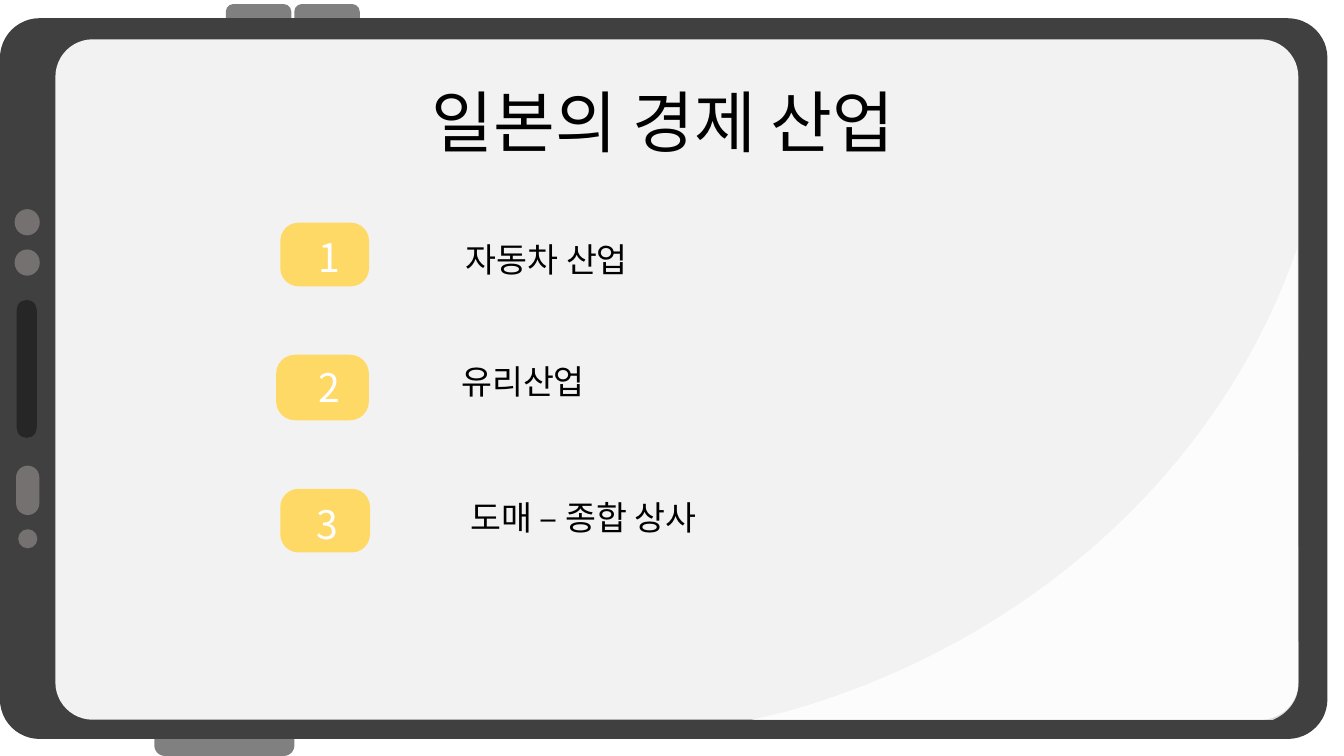
"""Build a phone-framed slide listing three Japanese industries."""
from lxml.etree import SubElement
from pptx import Presentation
from pptx.dml.color import RGBColor
from pptx.enum.shapes import MSO_SHAPE
from pptx.enum.text import MSO_ANCHOR, MSO_AUTO_SIZE, PP_ALIGN
from pptx.oxml.ns import qn
from pptx.util import Pt

FONT = "Noto Sans CJK KR"
BLACK = RGBColor(0x00, 0x00, 0x00)
WHITE = RGBColor(0xFF, 0xFF, 0xFF)
BUTTON_GREY = RGBColor(0x80, 0x80, 0x80)
FRAME_GREY = RGBColor(0x40, 0x40, 0x40)
SCREEN_GREY = RGBColor(0xF2, 0xF2, 0xF2)
SPEAKER_GREY = RGBColor(0x26, 0x26, 0x26)
SENSOR_GREY = RGBColor(0x76, 0x71, 0x71)
BADGE_YELLOW = RGBColor(0xFF, 0xD9, 0x66)

TITLE = ("일본의 경제 산업", (190.1, 54, 567.4, 65.5))
ROUND, OVAL = MSO_SHAPE.ROUNDED_RECTANGLE, MSO_SHAPE.OVAL
PHONE_PARTS = [
    (ROUND, (161.3, 2.9, 46.8, 32.4), 0.167, BUTTON_GREY),
    (ROUND, (210.2, 2.9, 46.8, 32.4), 0.167, BUTTON_GREY),
    (ROUND, (110.2, 494.6, 100.1, 45.4), 0.167, BUTTON_GREY),
    (ROUND, (0, 13, 948.2, 514.8), 0.055, FRAME_GREY),
    (ROUND, (39.6, 28.1, 887.8, 486), 0.055, SCREEN_GREY),
    (ROUND, (11.9, 214.2, 14.4, 98.6), 0.5, SPEAKER_GREY),
    (OVAL, (10.4, 178.2, 18, 18.7), None, SENSOR_GREY),
    (OVAL, (10.4, 149.4, 18, 18.7), None, SENSOR_GREY),
    (OVAL, (13, 378, 13.7, 13.7), None, SENSOR_GREY),
    (ROUND, (11.5, 332.6, 16.6, 35.3), 0.5, SENSOR_GREY),
]
GLARE_CORNER = [(927.4, 488.9), (927.4, 499.7), (920.2, 509), (910.8, 513.4)]
GLARE_EDGE = [(561.6, 508.3), (735.1, 459.4), (872.6, 334.8), (926.6, 177.1)]
GLARE_OPACITY = 80
INDUSTRIES = [
    ("1", "자동차 산업", (200.2, 159.1, 63.4, 45.4),
     (184.3, 163.4, 101.5, 41), (244.1, 167, 293, 36)),
    ("2", "유리산업", (197.3, 253.4, 66.2, 46.8),
     (164.2, 256.3, 141.8, 41), (288.7, 254.2, 169.9, 36)),
    ("3", "도매 – 종합 상사", (200.2, 349.2, 64.1, 45.4),
     (160.6, 353.5, 146.9, 41), (275, 351.4, 283.7, 36)),
]


def paint(shape, color):
    """Give a shape a flat fill without line or shadow."""
    shape.shadow.inherit = False
    shape.fill.solid()
    shape.fill.fore_color.rgb = color
    shape.line.fill.background()


def add_part(slide, kind, box, corner, color):
    """Add one filled preset shape."""
    shape = slide.shapes.add_shape(kind, *map(Pt, box))
    if corner is not None:
        shape.adjustments[0] = corner
    paint(shape, color)


def write_text(shape, text, size, color):
    """Write one centred line in the slide font."""
    frame = shape.text_frame
    frame_format = {"word_wrap": True, "vertical_anchor": MSO_ANCHOR.TOP,
                    "auto_size": MSO_AUTO_SIZE.SHAPE_TO_FIT_TEXT}
    for name, value in frame_format.items():
        setattr(frame, name, value)
    paragraph = frame.paragraphs[0]
    paragraph.alignment = PP_ALIGN.CENTER
    run = paragraph.add_run()
    run.text = text
    for name, value in {"name": FONT, "size": Pt(size)}.items():
        setattr(run.font, name, value)
    run.font.color.rgb = color
    SubElement(run._r.get_or_add_rPr(), qn("a:ea"), typeface=FONT)


def curve_points(controls, steps=40):
    """Return points along a cubic curve."""
    points = []
    for step in range(steps + 1):
        t = step / steps
        weights = ((1 - t) ** 3, 3 * t * (1 - t) ** 2, 3 * t * t * (1 - t), t ** 3)
        points.append(tuple(
            Pt(sum(weight * point[axis] for weight, point in zip(weights, controls)))
            for axis in (0, 1)))
    return points


def add_glare(slide):
    """Add the translucent reflection in the lower right of the screen."""
    bottom = [(Pt(909.4), Pt(514.1)), (Pt(537.1), Pt(514.1))]
    outline = curve_points(GLARE_CORNER) + bottom + curve_points(GLARE_EDGE)
    builder = slide.shapes.build_freeform(*outline[0], scale=1.0)
    builder.add_line_segments(outline[1:], close=True)
    glare = builder.convert_to_shape()
    paint(glare, WHITE)
    color = glare._element.spPr.find(qn("a:solidFill"))[0]
    SubElement(color, qn("a:alpha"), val=str(GLARE_OPACITY * 1000))


def main():
    """Create and save the presentation."""
    presentation = Presentation()
    presentation.slide_width, presentation.slide_height = Pt(960), Pt(540)
    slide = presentation.slides.add_slide(presentation.slide_layouts[5])
    for part in PHONE_PARTS:
        add_part(slide, *part)
    add_glare(slide)

    title = slide.shapes.title
    text, box = TITLE
    for name, value in zip(("left", "top", "width", "height"), box):
        setattr(title, name, Pt(value))
    write_text(title, text, 48, BLACK)
    slide.shapes._spTree.append(title._element)

    for number, industry, badge_box, number_box, industry_box in INDUSTRIES:
        add_part(slide, ROUND, badge_box, 0.285, BADGE_YELLOW)
        for text, box, size, color in ((number, number_box, 28, WHITE),
                                       (industry, industry_box, 24, BLACK)):
            write_text(slide.shapes.add_textbox(*map(Pt, box)), text, size, color)
    presentation.save("out.pptx")


if __name__ == "__main__":
    main()
